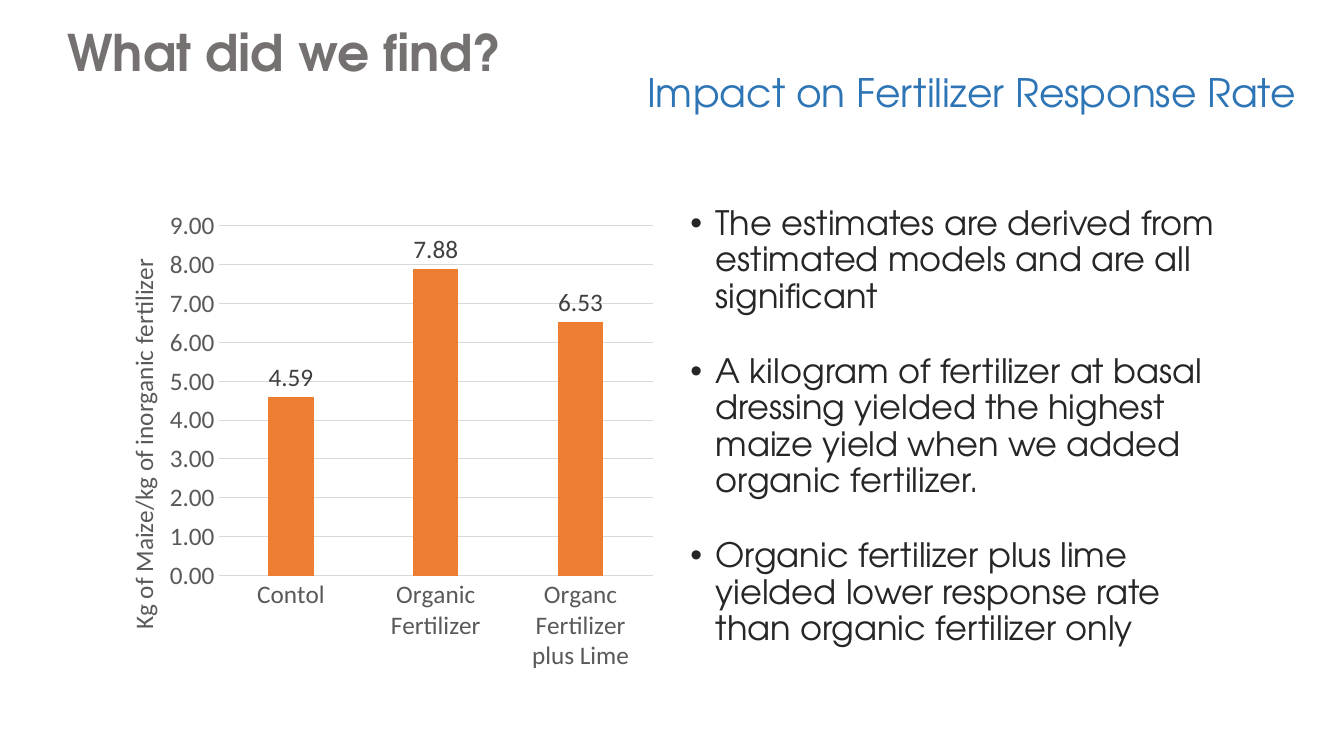
from dataclasses import dataclass

from lxml import etree
from pptx import Presentation
from pptx import util as u
from pptx.chart.data import CategoryChartData
from pptx.dml.color import RGBColor
from pptx.enum import chart as ch, text
from pptx.oxml import ns


@dataclass(frozen=True)
class Theme:
    """Colours, fonts and type sizes of the slide."""
    width: float = 13.33
    height: float = 7.5
    heading: str = "767171"
    subtitle: str = "2E75B6"
    body: str = "262626"
    axis: str = "595959"
    label: str = "404040"
    grid: str = "D9D9D9"
    bar: str = "ED7D31"
    font: str = "TeX Gyre Adventor"
    chart_font: str = "Calibri"
    heading_size: int = 36
    subtitle_size: int = 28
    body_size: int = 24
    chart_size: int = 18


THEME = Theme()
MARGIN, HEADER_WIDTH = 0.57, 12.38
COLUMNS, COLUMN_WIDTH = (0.92, 6.75), 5.67
CONTENT_TOP, CONTENT_HEIGHT = 2, 4.76
FINDINGS = (
    "The estimates are derived from estimated models and are all significant",
    "A kilogram of fertilizer at basal dressing yielded the highest maize yield "
    "when we added organic fertilizer.",
    "Organic fertilizer plus lime yielded lower response rate than organic fertilizer only",
)
RESPONSE = {"Contol": 4.59, "Organic Fertilizer": 7.88, "Organc Fertilizer plus Lime": 6.53}


def style(font, color, size, name, bold=False):
    """Format a font."""
    font.name, font.size, font.bold = name, u.Pt(size), bold
    font.color.rgb = RGBColor.from_string(color)


def add_text(slide, box, lines, color, size, bold=False, align=text.PP_ALIGN.LEFT):
    """Add a text box with one paragraph a line and return its frame."""
    tf = slide.shapes.add_textbox(*(u.Inches(v) for v in box)).text_frame
    tf.word_wrap = True
    tf.text = "\n".join(lines)
    for p in tf.paragraphs:
        p.alignment = align
        style(p.runs[0].font, color, size, THEME.font, bold)
    return tf


def add_bullets(slide, box, lines):
    """Add a bulleted list."""
    tf = add_text(slide, box, lines, THEME.body, THEME.body_size)
    for i, p in enumerate(tf.paragraphs):
        p.line_spacing = 0.9
        p.space_before, p.space_after = u.Pt(10 if i else 0), u.Pt(18)
        pPr = p._p.get_or_add_pPr()
        pPr.set("marL", str(u.Inches(0.25)))
        pPr.set("indent", str(-u.Inches(0.25)))
        etree.SubElement(pPr, ns.qn("a:buFont"), typeface="Arial")
        etree.SubElement(pPr, ns.qn("a:buChar"), char="•")


def place(element, target=None, **shares):
    """Fix a chart part at shares of the chart's size."""
    layout = element.get_or_add_layout() if hasattr(element, "get_or_add_layout") else None
    if layout is None:
        layout = element.find(ns.qn("c:layout"))
    if layout is None:
        layout = etree.Element(ns.qn("c:layout"))
        element.insert(0, layout)
    manual = etree.SubElement(layout, ns.qn("c:manualLayout"))
    if target:
        etree.SubElement(manual, ns.qn("c:layoutTarget"), val=target)
    for mode in ("xMode", "yMode"):
        etree.SubElement(manual, ns.qn(f"c:{mode}"), val="edge")
    for key, share in shares.items():
        etree.SubElement(manual, ns.qn(f"c:{key}"), val=str(share))


def style_axes(chart):
    """Format both axes and the value title."""
    cat, val = chart.category_axis, chart.value_axis
    for axis in (cat, val):
        axis.major_tick_mark = axis.minor_tick_mark = ch.XL_TICK_MARK.NONE
        style(axis.tick_labels.font, THEME.axis, THEME.chart_size, THEME.chart_font)
    for line in (cat.format.line, val.major_gridlines.format.line):
        line.color.rgb = RGBColor.from_string(THEME.grid)
        line.width = u.Pt(0.75)
    val.format.line.fill.background()
    val.minimum_scale, val.maximum_scale, val.major_unit = 0, 9, 1
    val.tick_labels.number_format = "0.00"
    val.tick_labels.number_format_is_linked = False
    tf = val.axis_title.text_frame
    tf.text = "Kg of Maize/kg of inorganic fertilizer"
    style(tf.paragraphs[0].runs[0].font, THEME.axis, THEME.chart_size, THEME.chart_font)
    tf._txBody.bodyPr.set("rot", "-5400000")
    tf._txBody.bodyPr.set("vert", "horz")
    place(val.axis_title._element, x=0.05, y=0.11)


def add_columns(slide, box, values):
    """Add a labelled column chart."""
    data = CategoryChartData(number_format="0.00")
    data.categories = list(values)
    data.add_series("Series 1", list(values.values()))
    chart = slide.shapes.add_chart(
        ch.XL_CHART_TYPE.COLUMN_CLUSTERED, *(u.Inches(v) for v in box), data).chart
    chart.has_legend = chart.has_title = False
    style(chart.font, THEME.axis, THEME.chart_size, THEME.chart_font)
    style_axes(chart)
    plot = chart.plots[0]
    plot.gap_width, plot.overlap, plot.vary_by_categories = 219, -27, False
    fill = plot.series[0].format.fill
    fill.solid()
    fill.fore_color.rgb = RGBColor.from_string(THEME.bar)
    plot.has_data_labels = True
    labels = plot.data_labels
    labels.show_value = True
    labels.number_format, labels.number_format_is_linked = "0.00", False
    labels.position = ch.XL_LABEL_POSITION.OUTSIDE_END
    style(labels.font, THEME.label, THEME.chart_size, THEME.chart_font)
    place(chart._chartSpace.chart.plotArea, "inner", x=0.22, y=0.05, w=0.76, h=0.73)


def main():
    """Build and save the slide."""
    prs = Presentation()
    prs.slide_width, prs.slide_height = u.Inches(THEME.width), u.Inches(THEME.height)
    slide = prs.slides.add_slide(prs.slide_layouts[6])
    add_text(slide, (MARGIN, 0.16, HEADER_WIDTH, 0.71), ["What did we find?"],
             THEME.heading, THEME.heading_size, bold=True)
    add_text(slide, (MARGIN, 0.63, HEADER_WIDTH, 0.57), ["Impact on Fertilizer Response Rate"],
             THEME.subtitle, THEME.subtitle_size, align=text.PP_ALIGN.RIGHT)
    chart_box, list_box = ((x, CONTENT_TOP, COLUMN_WIDTH, CONTENT_HEIGHT) for x in COLUMNS)
    add_bullets(slide, list_box, FINDINGS)
    add_columns(slide, chart_box, RESPONSE)
    prs.save("out.pptx")


if __name__ == "__main__":
    main()
